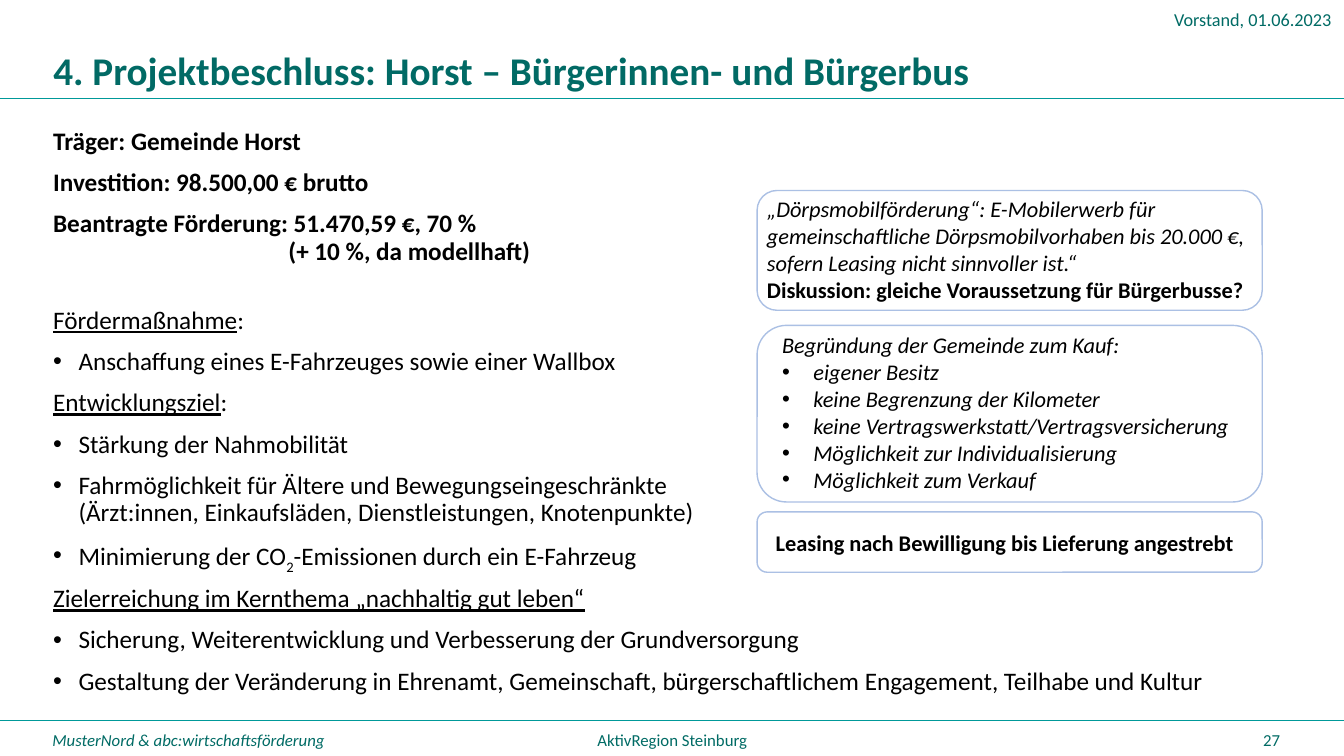
from lxml import etree
from pptx import Presentation
from pptx.dml.color import RGBColor
from pptx.enum.shapes import MSO_CONNECTOR, MSO_SHAPE
from pptx.enum.text import MSO_ANCHOR, PP_ALIGN
from pptx.oxml.ns import qn
from pptx.util import Cm, Pt

LINE = MSO_CONNECTOR.STRAIGHT
ROUNDED = MSO_SHAPE.ROUNDED_RECTANGLE
TOP, MIDDLE = MSO_ANCHOR.TOP, MSO_ANCHOR.MIDDLE
LEFT, CENTER, RIGHT = PP_ALIGN.LEFT, PP_ALIGN.CENTER, PP_ALIGN.RIGHT

FONT = "Calibri"
GREEN, TITLE_GREEN, TEAL = "006B65", "016A65", "009999"
BLACK, FRAME_BLUE = "000000", "ABC0E4"
TITLE_ONLY = 5
WIDTH, HEIGHT = 33.87, 19.05
FRAME_LEFT, FRAME_WIDTH = 19.08, 12.73
TAB_STOP = 5.93

KEY_FACTS = [
    "Träger: Gemeinde Horst",
    "Investition: 98.500,00 € brutto",
    "Beantragte Förderung: 51.470,59 €, 70 %\n\t(+ 10 %, da modellhaft)",
]
# Heading, text after the underlined heading, bullet points
SECTIONS = [
    ("Fördermaßnahme", ":", ["Anschaffung eines E-Fahrzeuges sowie einer Wallbox"]),
    ("Entwicklungsziel", ":", [
        "Stärkung der Nahmobilität",
        "Fahrmöglichkeit für Ältere und Bewegungseingeschränkte\n"
        "(Ärzt:innen, Einkaufsläden, Dienstleistungen, Knotenpunkte)",
        ("Minimierung der CO", "2", "-Emissionen durch ein E-Fahrzeug"),
    ]),
    ("Zielerreichung im Kernthema „nachhaltig gut leben“", "", [
        "Sicherung, Weiterentwicklung und Verbesserung der Grundversorgung",
        "Gestaltung der Veränderung in Ehrenamt, Gemeinschaft, "
        "bürgerschaftlichem Engagement, Teilhabe und Kultur",
    ]),
]
REASONS = [
    "eigener Besitz",
    "keine Begrenzung der Kilometer",
    "keine Vertragswerkstatt/Vertragsversicherung",
    "Möglichkeit zur Individualisierung",
    "Möglichkeit zum Verkauf",
]


def rgb(color):
    return RGBColor.from_string(color)


def add_text(p, text, size=16, color=BLACK, bold=False, italic=False,
             underline=False, subscript=False):
    """Append formatted text, with a line break at each newline."""
    for i, line in enumerate(text.split("\n")):
        if i:
            p.add_line_break()
        r = p.add_run()
        r.text = line
        f = r.font
        f.name, f.size, f.color.rgb = FONT, Pt(size), rgb(color)
        f.bold, f.italic, f.underline = bold, italic, underline
        if subscript:
            f._element.set("baseline", "-25000")


def add_paragraph(tf, align=LEFT, spacing=1.0, before=0):
    """Use the empty first paragraph, or append a new one."""
    p = tf.paragraphs[0]
    if p.runs:
        p = tf.add_paragraph()
    p.alignment, p.line_spacing, p.space_before = align, spacing, Pt(before)
    return p


def set_bullet(p, indent):
    pPr = p._p.get_or_add_pPr()
    pPr.set("marL", str(Cm(indent)))
    pPr.set("indent", str(-Cm(indent)))
    etree.SubElement(pPr, qn("a:buFont"), typeface="Arial")
    etree.SubElement(pPr, qn("a:buChar"), char="•")


def set_tab_stop(p, pos):
    tabs = etree.SubElement(p._p.get_or_add_pPr(), qn("a:tabLst"))
    etree.SubElement(tabs, qn("a:tab"), pos=str(Cm(pos)), algn="l")


def add_box(s, left, top, width, height, anchor=TOP, wrap=True):
    sp = s.shapes.add_textbox(Cm(left), Cm(top), Cm(width), Cm(height))
    tf = sp.text_frame
    tf.word_wrap, tf.vertical_anchor = wrap, anchor
    return tf


def add_rule(s, top):
    """Draw a thin line across the slide."""
    line = s.shapes.add_connector(LINE, 0, Cm(top), Cm(WIDTH), Cm(top))
    line.line.color.rgb, line.line.width = rgb(TEAL), Pt(0.75)
    etree.SubElement(line._element.spPr, qn("a:effectLst"))


def add_frame(s, top, height):
    sp = s.shapes.add_shape(ROUNDED, Cm(FRAME_LEFT), Cm(top), Cm(FRAME_WIDTH), Cm(height))
    sp.shadow.inherit = False
    sp.fill.background()
    sp.line.color.rgb, sp.line.width = rgb(FRAME_BLUE), Pt(1)


def add_title(s, text):
    sp = s.shapes.title
    sp.left, sp.top, sp.width, sp.height = Cm(1.09), Cm(1.22), Cm(26.77), Cm(1.24)
    tf = sp.text_frame
    tf.word_wrap, tf.vertical_anchor = True, MIDDLE
    add_text(add_paragraph(tf, spacing=0.9), text, size=28, color=TITLE_GREEN, bold=True)


def add_header_and_footer(s):
    tf = add_box(s, 29.34, 0.08, 4.55, 0.81, wrap=False)
    add_text(add_paragraph(tf), "Vorstand, 01.06.2023", size=13, color=GREEN)
    for left, width, align, text, italic in [
        (1.07, 7.62, LEFT, "MusterNord & abc:wirtschaftsförderung", True),
        (11.23, 11.43, CENTER, "AktivRegion Steinburg", False),
        (24.89, 7.62, RIGHT, "27", False),
    ]:
        tf = add_box(s, left, 18.14, width, 1.02, MIDDLE)
        add_text(add_paragraph(tf, align), text, size=12, color=GREEN, italic=italic)


def add_project_details(s):
    tf = add_box(s, 1.09, 3.12, 31.45, 14.05)
    for fact in KEY_FACTS:
        p = add_paragraph(tf, spacing=0.9, before=10)
        if "\t" in fact:
            set_tab_stop(p, TAB_STOP)
        add_text(p, fact, size=18, bold=True)
    for i, (heading, suffix, points) in enumerate(SECTIONS):
        p = add_paragraph(tf, spacing=0.9, before=10 if i else 30)
        add_text(p, heading, size=18, underline=True)
        if suffix:
            add_text(p, suffix, size=18)
        for point in points:
            p = add_paragraph(tf, spacing=0.9, before=10)
            set_bullet(p, 0.64)
            parts = (point,) if isinstance(point, str) else point
            for j, part in enumerate(parts):
                add_text(p, part, size=18, subscript=j == 1)


def add_remarks(s):
    """Add the three framed remarks on the right."""
    add_frame(s, 4.8, 3.02)
    tf = add_box(s, FRAME_LEFT, 4.8, FRAME_WIDTH, 3)
    add_text(add_paragraph(tf),
             "„Dörpsmobilförderung“: E-Mobilerwerb für gemeinschaftliche "
             "Dörpsmobilvorhaben bis 20.000 €,\nsofern Leasing nicht sinnvoller ist.“",
             italic=True)
    add_text(add_paragraph(tf), "Diskussion: gleiche Voraussetzung für Bürgerbusse?", bold=True)

    add_frame(s, 8.2, 4.45)
    tf = add_box(s, 19.46, 8.23, FRAME_WIDTH, 4.37)
    add_text(add_paragraph(tf), "Begründung der Gemeinde zum Kauf:", italic=True)
    for reason in REASONS:
        p = add_paragraph(tf)
        set_bullet(p, 0.79)
        add_text(p, reason, italic=True)

    add_frame(s, 12.9, 1.52)
    tf = add_box(s, 19.3, 13.21, 12.24, 0.94)
    add_text(add_paragraph(tf), "Leasing nach Bewilligung bis Lieferung angestrebt", bold=True)


def main():
    prs = Presentation()
    prs.slide_width, prs.slide_height = Cm(WIDTH), Cm(HEIGHT)
    s = prs.slides.add_slide(prs.slide_layouts[TITLE_ONLY])
    for top in (2.49, 18.16):
        add_rule(s, top)
    add_title(s, "4. Projektbeschluss: Horst – Bürgerinnen- und Bürgerbus")
    add_project_details(s)
    add_remarks(s)
    add_header_and_footer(s)
    prs.save("out.pptx")


if __name__ == "__main__":
    main()
